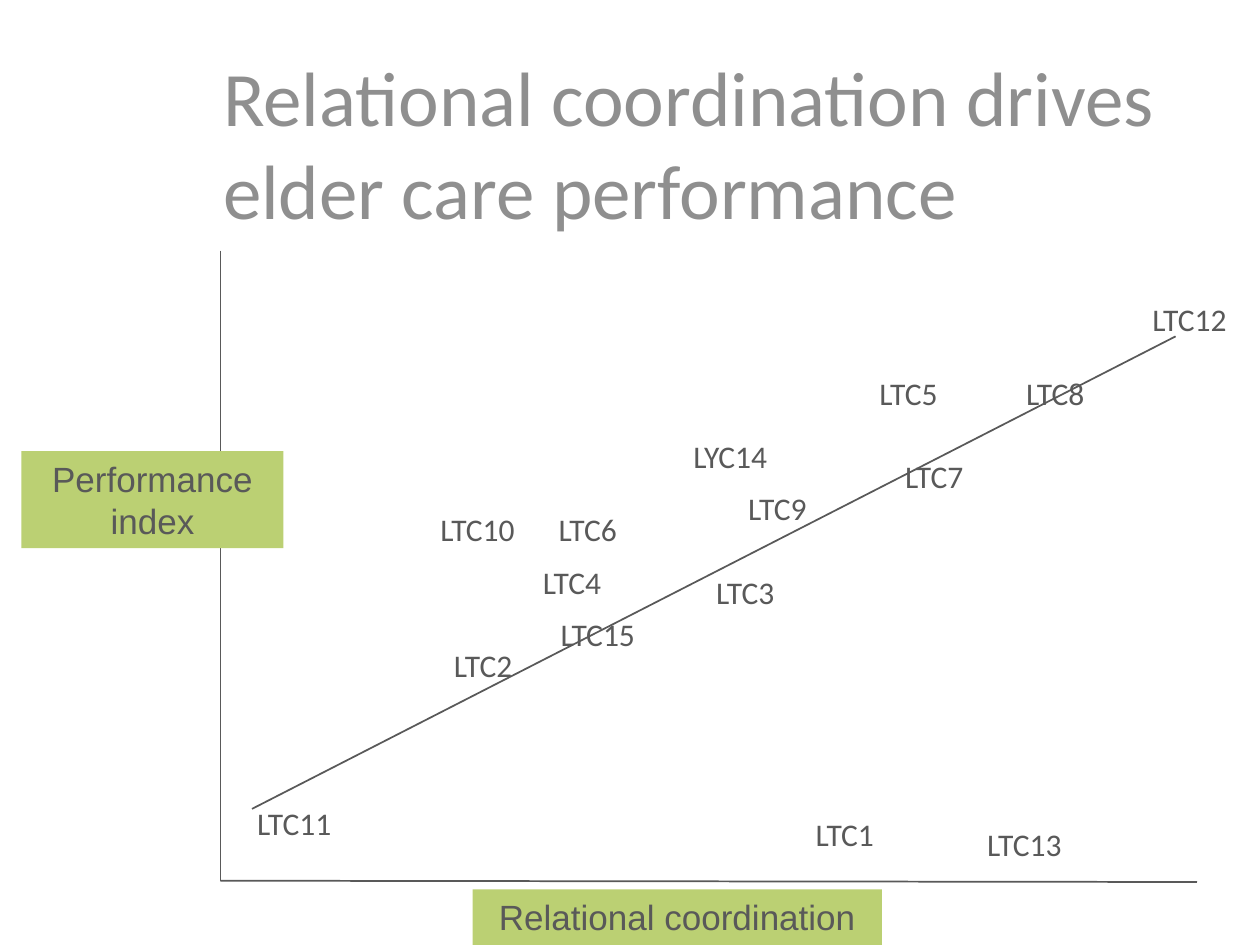
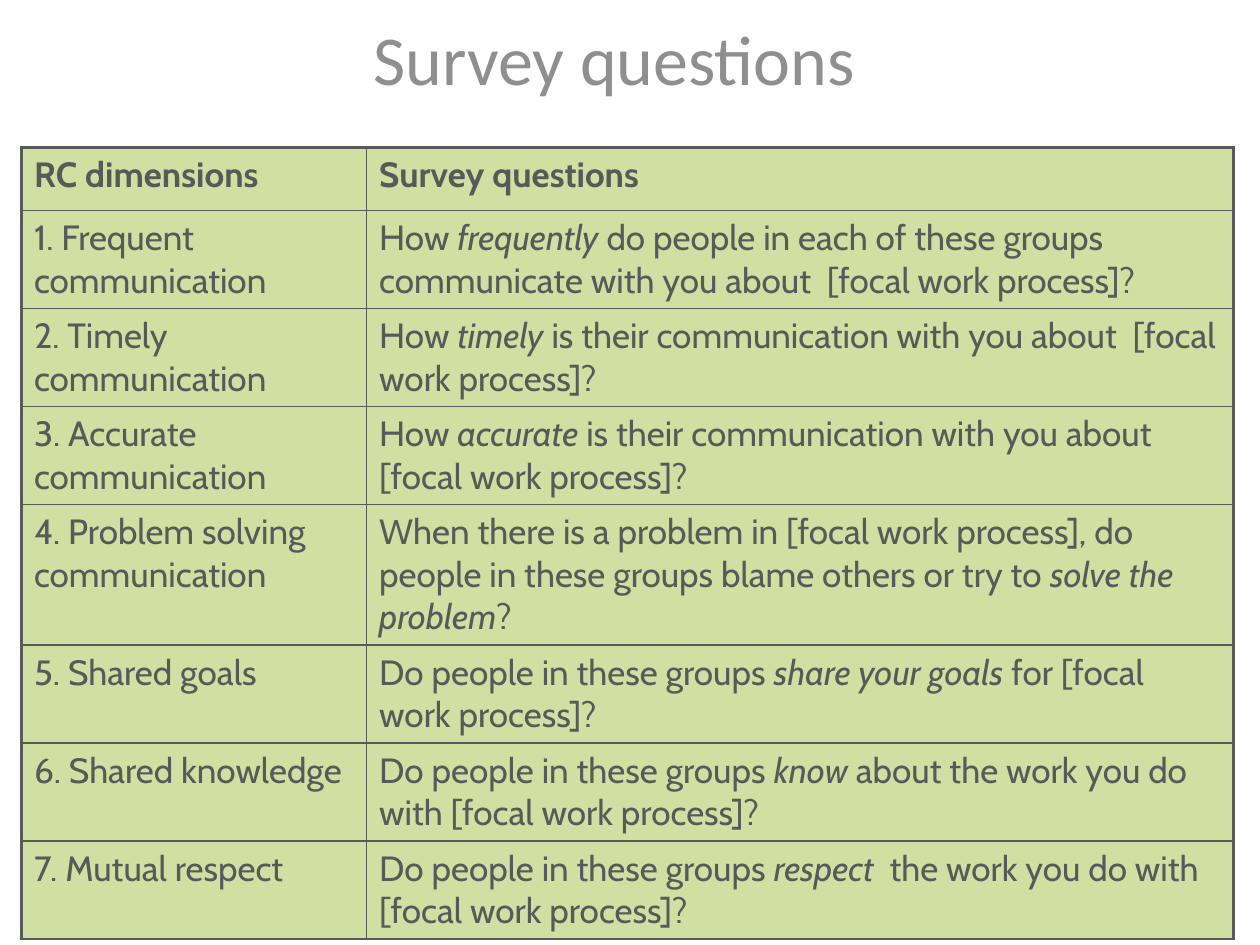
from pptx import Presentation
from pptx.dml.color import RGBColor
from pptx.enum.shapes import MSO_CONNECTOR, MSO_SHAPE
from pptx.enum.text import MSO_ANCHOR, MSO_AUTO_SIZE, PP_ALIGN
from pptx.oxml.ns import qn
from pptx.util import Inches, Pt
from lxml import etree

LEFT, CENTER = PP_ALIGN.LEFT, PP_ALIGN.CENTER
TOP, MIDDLE, BOTTOM = MSO_ANCHOR.TOP, MSO_ANCHOR.MIDDLE, MSO_ANCHOR.BOTTOM
NO_AUTOFIT = MSO_AUTO_SIZE.NONE
STRAIGHT, RECT = MSO_CONNECTOR.STRAIGHT, MSO_SHAPE.RECTANGLE

COLORS = {"title": "8F8F8F", "ink": "595959", "band": "BBD073", "cell": "D1E0A2"}
RGB = {name: RGBColor.from_string(value) for name, value in COLORS.items()}
THIN, THICK = Pt(1), Pt(2.25)


def write(tf, text, size, font, color="ink", align=LEFT, anchor=TOP, bold=False):
    """Write one paragraph; parts between asterisks are italic."""
    tf.word_wrap = True
    tf.vertical_anchor = anchor
    p = tf.paragraphs[0]
    p.alignment = align
    for i, part in enumerate(text.split("*")):
        r = p.add_run()
        r.text = part
        r.font.size = Pt(size)
        r.font.name = font
        r.font.bold = bold
        r.font.italic = i % 2 == 1
        r.font.color.rgb = RGB[color]


def add_titled_slide(text, box, size, align, anchor):
    s = prs.slides.add_slide(prs.slide_layouts[5])
    title = s.shapes.title
    title.left, title.top, title.width, title.height = map(Inches, box)
    title.text_frame.auto_size = NO_AUTOFIT
    write(title.text_frame, text, size, "Calibri", "title", align, anchor)
    return s


prs = Presentation()
prs.slide_width, prs.slide_height = Inches(10), Inches(7.5)

# Slide 1: scatter of care sites
s = add_titled_slide("Relational coordination drives elder care performance",
                     (1.67, 0.67, 7.83, 0.92), 44, LEFT, MIDDLE)

# Axes and trend line
lines = [
    (1.75, 1.99, 1.75, 6.99),
    (1.75, 6.99, 9.5, 7),
    (2, 6.42, 9.33, 2.67),
]
for ends in lines:
    line = s.shapes.add_connector(STRAIGHT, *map(Inches, ends))
    line.line.color.rgb = RGB["ink"]
    line.line.width = THIN
    etree.SubElement(line._element.spPr, qn("a:effectLst"))

# Axis names
axis_names = [
    ("Performance index", 0.17, 3.58, 2.08, 0.77),
    ("Relational coordination", 3.75, 7.06, 3.25, 0.44),
]
for text, *box in axis_names:
    sp = s.shapes.add_shape(RECT, *map(Inches, box))
    sp.shadow.inherit = False
    sp.fill.solid()
    sp.fill.fore_color.rgb = RGB["band"]
    sp.line.fill.background()
    write(sp.text_frame, text, 20, "Arial", align=CENTER)

# Care sites: label, left, top, width
sites = [
    ("LTC11", 1.92, 6.33, 0.83),
    ("LTC2", 3.17, 5.08, 1.33),
    ("LTC15", 4.33, 4.83, 0.83),
    ("LTC4", 4, 4.42, 1.08),
    ("LTC9", 5.67, 3.83, 1),
    ("LTC5", 6.67, 2.92, 1.08),
    ("LTC12", 8.9, 2.33, 1.08),
    ("LTC8", 7.75, 2.92, 1.25),
    ("LTC13", 7.67, 6.5, 0.92),
    ("LTC10", 3.25, 4, 1.08),
    ("LTC6", 4.25, 4, 0.83),
    ("LTC3", 5.5, 4.5, 0.83),
    ("LTC7", 6.75, 3.58, 1.33),
    ("LTC1", 6.08, 6.42, 1.25),
    ("LYC14", 5.17, 3.42, 1.25),
]
for text, left, top, width in sites:
    sp = s.shapes.add_textbox(Inches(left), Inches(top), Inches(width), Inches(0.4))
    write(sp.text_frame, text, 18, "Calibri", align=CENTER)

# Slide 2: table of survey questions
s = add_titled_slide("Survey questions", (0, 0.17, 9.75, 0.67), 40, CENTER, BOTTOM)

# Row height, dimension, question
rows = [
    (0.5, "RC dimensions", "Survey questions"),
    (0.77, "1. Frequent communication",
     "How *frequently* do people in each of these groups communicate with you about  [focal work process]?"),
    (0.77, "2. Timely communication",
     "How *timely* is their communication with you about  [focal work process]?"),
    (0.77, "3. Accurate communication",
     "How *accurate* is their communication with you about [focal work process]?"),
    (1.1, "4. Problem solving communication",
     "When there is a problem in [focal work process], do people in these groups "
     "blame others or try to *solve the problem*?"),
    (0.77, "5. Shared goals",
     "Do people in these groups *share your goals* for [focal work process]?"),
    (0.77, "6. Shared knowledge",
     "Do people in these groups *know* about the work you do with [focal work process]?"),
    (0.77, "7. Mutual respect",
     "Do people in these groups *respect  *the work you do with [focal work process]?"),
]
table = s.shapes.add_table(len(rows), 2, Inches(0.17), Inches(1.17),
                           Inches(9.62), Inches(6.2)).table
table.first_row = table.horz_banding = False
table.columns[0].width, table.columns[1].width = Inches(2.74), Inches(6.88)

for i, (height, *texts) in enumerate(rows):
    table.rows[i].height = Inches(height)
    for j, text in enumerate(texts):
        cell = table.cell(i, j)
        write(cell.text_frame, text, 20, "Cabin", bold=i == 0)
        cell.fill.solid()
        cell.fill.fore_color.rgb = RGB["cell"]
        # Thick borders on the left, right and top edges of the table
        thick = {"a:lnL": j == 0, "a:lnR": j == 1, "a:lnT": i == 0, "a:lnB": False}
        tcPr = cell._tc.get_or_add_tcPr()
        for place, (tag, is_thick) in enumerate(thick.items()):
            ln = etree.Element(qn(tag), w=str(THICK if is_thick else THIN))
            fill = etree.SubElement(ln, qn("a:solidFill"))
            etree.SubElement(fill, qn("a:srgbClr"), val=COLORS["ink"])
            tcPr.insert(place, ln)

prs.save("out.pptx")
